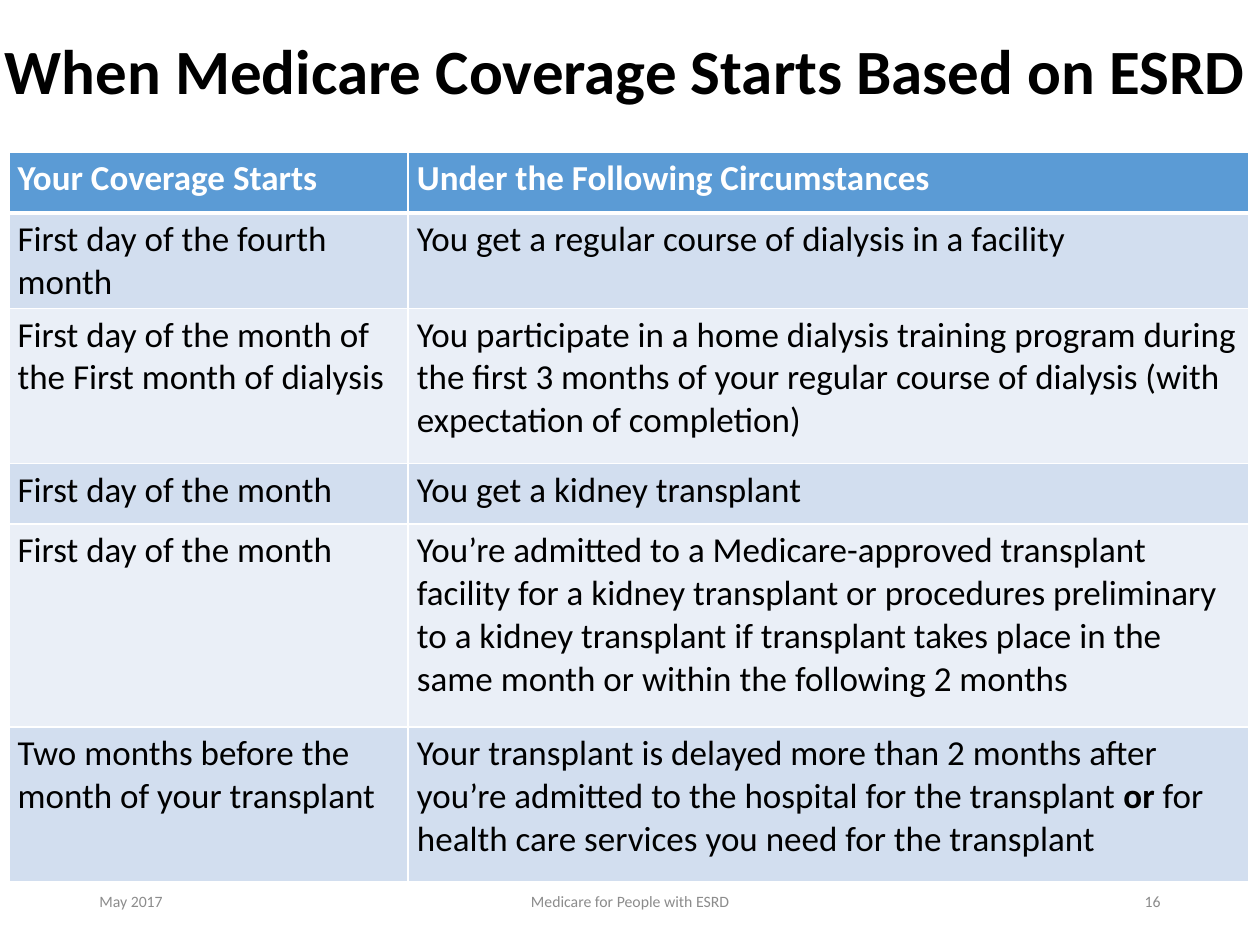
import pptx
import pptx.util
import pptx.dml.color
import pptx.enum.text
import pptx.oxml
import pptx.oxml.ns
from lxml import etree

Inches = pptx.util.Inches
Pt = pptx.util.Pt
RGBColor = pptx.dml.color.RGBColor
PP_ALIGN = pptx.enum.text.PP_ALIGN
MSO_ANCHOR = pptx.enum.text.MSO_ANCHOR
qn = pptx.oxml.ns.qn

BLACK = RGBColor(0x00, 0x00, 0x00)
WHITE = RGBColor(0xFF, 0xFF, 0xFF)
GRAY = RGBColor(0x8C, 0x8C, 0x8C)
HEADER_BLUE = RGBColor(0x5B, 0x9B, 0xD5)
BAND_DARK = RGBColor(0xD2, 0xDE, 0xEF)
BAND_LIGHT = RGBColor(0xEA, 0xEF, 0xF7)

COVERAGE_ROWS = [
    ("Your Coverage Starts", "Under the Following Circumstances"),
    ("First day of the fourth month", "You get a regular course of dialysis in a facility"),
    ("First day of the month of the First month of dialysis",
     "You participate in a home dialysis training program during the first 3 months "
     "of your regular course of dialysis (with expectation of completion)"),
    ("First day of the month", "You get a kidney transplant"),
    ("First day of the month",
     "You’re admitted to a Medicare-approved transplant facility for a kidney transplant "
     "or procedures preliminary to a kidney transplant if transplant takes place in the "
     "same month or within the following 2 months"),
    ("Two months before the month of your transplant",
     "Your transplant is delayed more than 2 months after you’re admitted to the hospital "
     "for the transplant *or* for health care services you need for the transplant"),
]
COLUMN_WIDTHS = [3.17, 6.67]
ROW_HEIGHTS = [0.48, 0.75, 1.23, 0.48, 1.61, 1.23]


def write_text(tf, text, size=20, color=BLACK, bold=False, align=PP_ALIGN.LEFT, spacing=None):
    p = tf.paragraphs[0]
    p.alignment = align
    if spacing:
        p.line_spacing = spacing
    for i, part in enumerate(text.split("*")):
        r = p.add_run()
        r.text = part
        r.font.name = "Calibri"
        r.font.size = Pt(size)
        r.font.bold = bold or i % 2 == 1
        r.font.color.rgb = color


class SlideBuilder:
    font_color = BLACK
    footer_size = 9
    border_color = WHITE

    def __init__(self, s):
        self.s = s

    def title(self, text, left, top, width, height):
        sp = self.s.shapes.title
        sp.left, sp.top = Inches(left), Inches(top)
        sp.width, sp.height = Inches(width), Inches(height)
        sp.text_frame.vertical_anchor = MSO_ANCHOR.MIDDLE
        write_text(sp.text_frame, text, size=36, color=self.font_color, bold=True,
                   align=PP_ALIGN.CENTER, spacing=0.9)

    def footer(self, text, left, width, align):
        sp = self.s.shapes.add_textbox(Inches(left), Inches(6.95), Inches(width), Inches(0.4))
        tf = sp.text_frame
        tf.word_wrap = True
        tf.vertical_anchor = MSO_ANCHOR.MIDDLE
        write_text(tf, text, size=self.footer_size, color=GRAY, align=align)

    def border(self, cell, side, width):
        tcPr = cell._tc.get_or_add_tcPr()
        ln = etree.SubElement(tcPr, qn(f"a:ln{side}"), w=str(Pt(width)))
        fill = etree.SubElement(ln, qn("a:solidFill"))
        etree.SubElement(fill, qn("a:srgbClr"), val=str(self.border_color))

    def cell(self, cell, text, row):
        header = row == 0
        cell.margin_left = cell.margin_right = Inches(0.07)
        cell.margin_top = cell.margin_bottom = Inches(0.04)
        for side in "LRTB":
            thick = (header and side == "B") or (row == 1 and side == "T")
            self.border(cell, side, 3 if thick else 1)
        cell.fill.solid()
        band = BAND_DARK if row % 2 else BAND_LIGHT
        cell.fill.fore_color.rgb = HEADER_BLUE if header else band
        write_text(cell.text_frame, text, color=WHITE if header else self.font_color, bold=header)

    def table(self, rows, left, top, widths, heights):
        frame = self.s.shapes.add_table(len(rows), len(widths), Inches(left), Inches(top),
                                        Inches(sum(widths)), Inches(sum(heights)))
        table = frame.table
        for column, width in zip(table.columns, widths):
            column.width = Inches(width)
        for i, (texts, height) in enumerate(zip(rows, heights)):
            table.rows[i].height = Inches(height)
            for j, text in enumerate(texts):
                self.cell(table.cell(i, j), text, i)


def main():
    prs = pptx.Presentation()
    prs.slide_width, prs.slide_height = Inches(10), Inches(7.5)
    slide = SlideBuilder(prs.slides.add_slide(prs.slide_layouts[5]))
    slide.title("When Medicare Coverage Starts Based on ESRD", -0.08, 0, 10.08, 1.18)
    slide.table(COVERAGE_ROWS, 0.07, 1.21, COLUMN_WIDTHS, ROW_HEIGHTS)
    slide.footer("May 2017", 0.69, 2.25, PP_ALIGN.LEFT)
    slide.footer("Medicare for People with ESRD", 3.31, 3.38, PP_ALIGN.CENTER)
    slide.footer("16", 7.06, 2.25, PP_ALIGN.RIGHT)
    prs.save("out.pptx")


if __name__ == "__main__":
    main()
